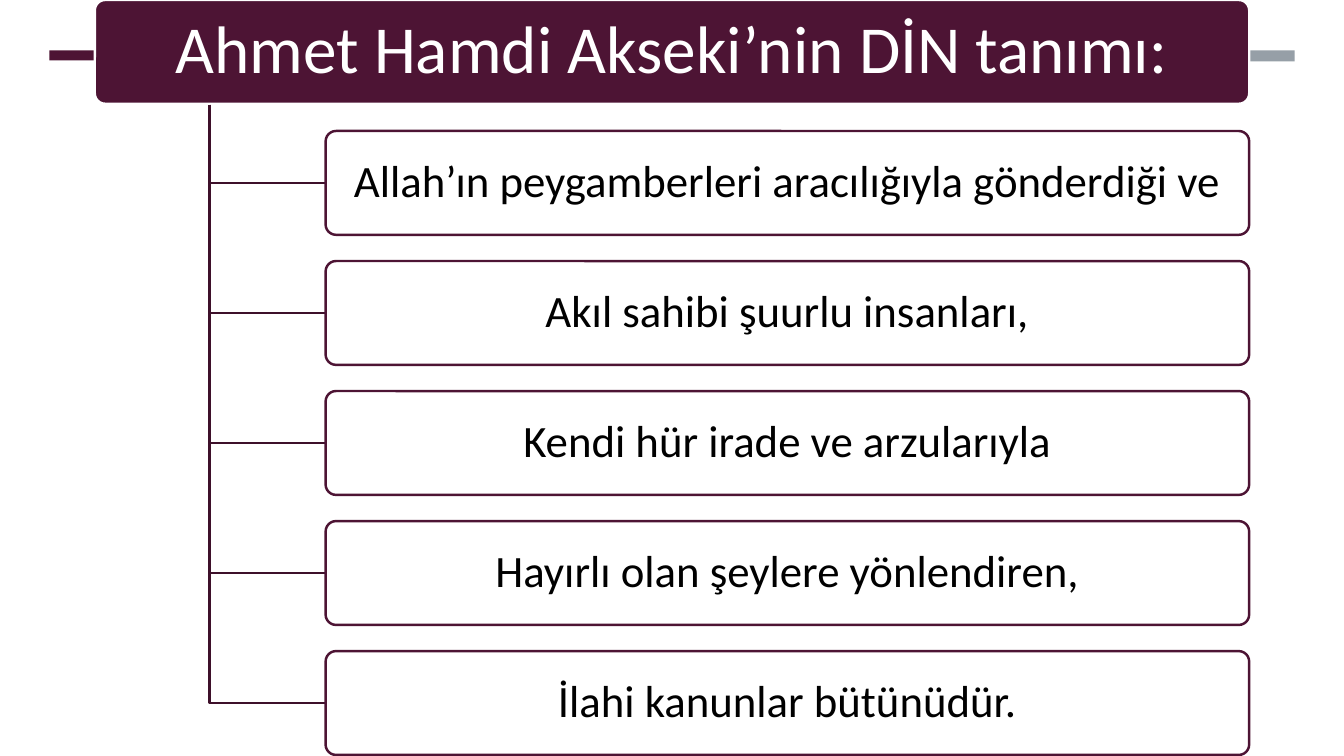
"""Build a slide that sets out a definition of religion as a hierarchy of five boxes."""
from lxml.etree import SubElement
from pptx import Presentation
from pptx.dml.color import RGBColor
from pptx.enum.shapes import MSO_SHAPE
from pptx.enum.text import MSO_ANCHOR, MSO_AUTO_SIZE, PP_ALIGN
from pptx.oxml.ns import qn
from pptx.util import Inches, Pt

TITLE = "Ahmet Hamdi Akseki’nin DİN tanımı:"
PARTS = [
    "Allah’ın peygamberleri aracılığıyla gönderdiği ve",
    "Akıl sahibi şuurlu insanları,",
    "Kendi hür irade ve arzularıyla",
    "Hayırlı olan şeylere yönlendiren,",
    "İlahi kanunlar bütünüdür.",
]

PLUM = RGBColor(0x4D, 0x14, 0x34)
DARK_PLUM = RGBColor(0x3E, 0x10, 0x2A)
GRAY = RGBColor(0x96, 0x9F, 0xA7)
WHITE = RGBColor(0xFF, 0xFF, 0xFF)
BLACK = RGBColor(0, 0, 0)

FONT = "Calibri"
LINE_WIDTH = Pt(1.75)
BARS = [(0.49, 0.10, PLUM), (8.79, 0.11, GRAY)]
BAR_TOP, BAR_WIDTH = 0.5, 4.05
HEADER = (0.94, 0, 11.45, 1.03)
TITLE_AREA = (0.97, 0.03, 11.39, 0.97)
TRUNK_LEFT, TRUNK_TOP = 2.08, 1.04
PART_LEFT, PART_TOP, PART_WIDTH, PART_HEIGHT = 3.23, 1.3, 9.16, 1.03
PART_PITCH = 1.29


def add_box(page, kind, area, fill, line=None):
    box = page.shapes.add_shape(kind, *map(Inches, area))
    box.shadow.inherit = False
    box.fill.solid()
    box.fill.fore_color.rgb = fill
    if line is None:
        box.line.fill.background()
    else:
        box.line.color.rgb = line
        box.line.width = LINE_WIDTH
    if kind == MSO_SHAPE.ROUNDED_RECTANGLE:
        box.adjustments[0] = 0.1
    return box


def set_text(shape, text, size, color, side_inset, top_inset):
    frame = shape.text_frame
    frame.text = text
    frame.word_wrap = True
    frame.auto_size = MSO_AUTO_SIZE.NONE
    frame.vertical_anchor = MSO_ANCHOR.MIDDLE
    frame.margin_left = frame.margin_right = Inches(side_inset)
    frame.margin_top = frame.margin_bottom = Inches(top_inset)
    para = frame.paragraphs[0]
    para.alignment = PP_ALIGN.CENTER
    para.line_spacing = 0.9
    para.font.name = FONT
    para.font.size = Pt(size)
    para.font.color.rgb = color


def add_branch(page, middle):
    builder = page.shapes.build_freeform(Inches(TRUNK_LEFT), Inches(TRUNK_TOP))
    corner = (Inches(TRUNK_LEFT), Inches(middle))
    end = (Inches(PART_LEFT), Inches(middle))
    builder.add_line_segments([corner, end], close=False)
    branch = builder.convert_to_shape()
    branch.shadow.inherit = False
    branch.fill.background()
    branch.line.color.rgb = DARK_PLUM
    branch.line.width = LINE_WIDTH


def add_part(page, text, top):
    add_branch(page, top + PART_HEIGHT / 2)
    area = (PART_LEFT, top, PART_WIDTH, PART_HEIGHT)
    box = add_box(page, MSO_SHAPE.ROUNDED_RECTANGLE, area, WHITE, PLUM)
    fill_color = box.element.spPr.find(qn("a:solidFill"))[0]
    SubElement(fill_color, qn("a:alpha"), val="90000")
    set_text(box, text, 32, BLACK, 0.1, 0.07)


def main():
    deck = Presentation()
    deck.slide_width, deck.slide_height = Inches(13.33), Inches(7.5)
    page = deck.slides.add_slide(deck.slide_layouts[5])

    for left, height, color in BARS:
        add_box(page, MSO_SHAPE.RECTANGLE, (left, BAR_TOP, BAR_WIDTH, height), color)

    add_box(page, MSO_SHAPE.ROUNDED_RECTANGLE, HEADER, PLUM, WHITE)
    title = page.shapes.title
    title.left, title.top, title.width, title.height = map(Inches, TITLE_AREA)
    set_text(title, TITLE, 48, WHITE, 0.1, 0.07)
    title.element.getparent().append(title.element)

    for index, text in enumerate(PARTS):
        add_part(page, text, PART_TOP + index * PART_PITCH)

    deck.save("out.pptx")


if __name__ == "__main__":
    main()
